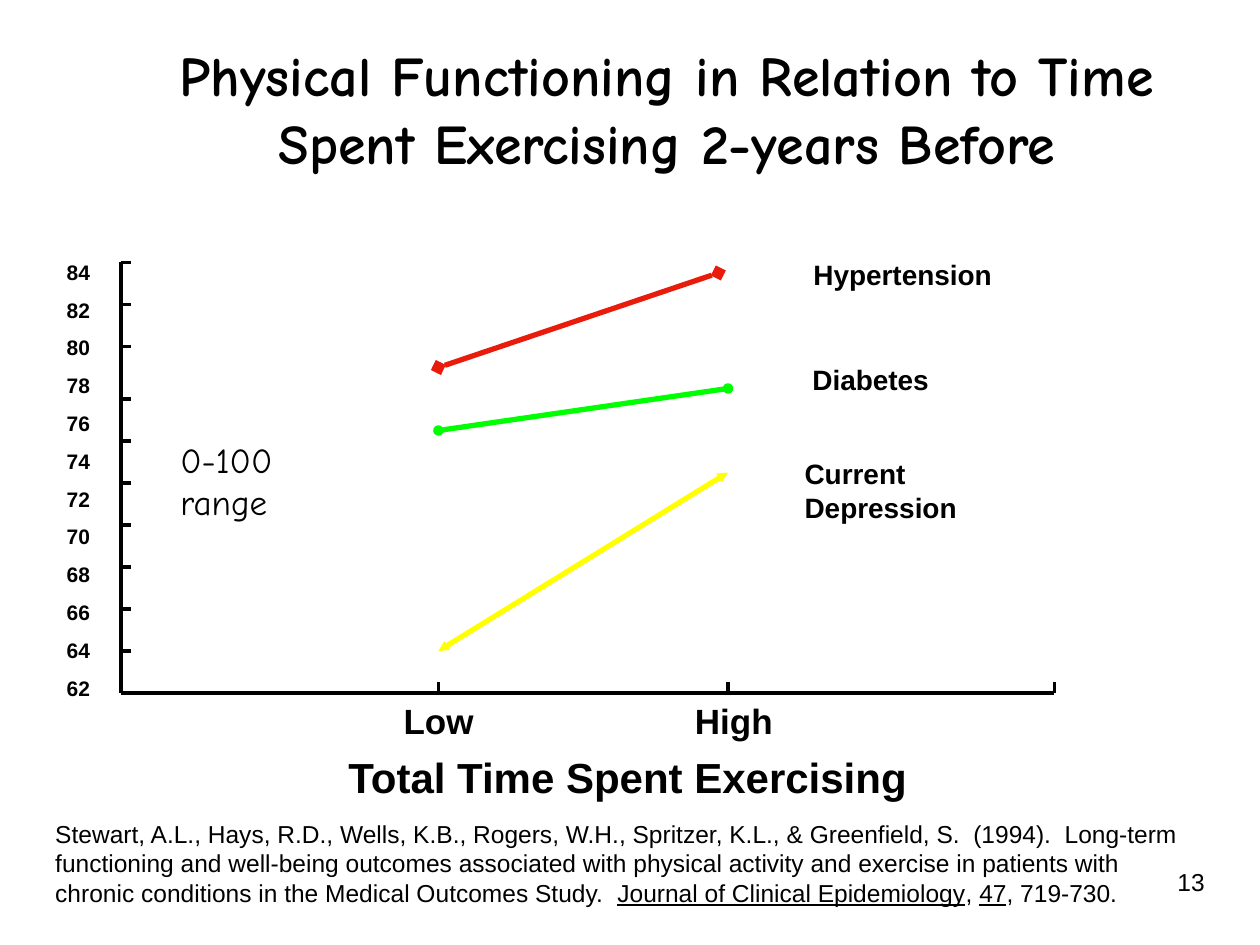
from lxml.etree import SubElement
from pptx import Presentation
from pptx.dml.color import RGBColor
from pptx.enum.shapes import MSO_CONNECTOR
from pptx.enum.text import MSO_ANCHOR, MSO_AUTO_SIZE, PP_ALIGN
from pptx.oxml.ns import qn
from pptx.util import Pt

BLACK = RGBColor(0x00, 0x00, 0x00)
RED = RGBColor(0xE9, 0x1B, 0x0B)
GREEN = RGBColor(0x00, 0xFF, 0x00)
YELLOW = RGBColor(0xFF, 0xFF, 0x00)

# Content: a text is a list of paragraphs, lines are parted by "\n",
# and "_" switches underlining on and off
TITLE = "Physical Functioning in Relation to Time\nSpent Exercising 2-years Before"
CITATION = (
    "Stewart, A.L., Hays, R.D., Wells, K.B., Rogers, W.H., Spritzer, K.L., & Greenfield, S.  (1994).  Long-term\n"
    "functioning and well-being outcomes associated with physical activity and exercise in patients with\n"
    "chronic conditions in the Medical Outcomes Study.  _Journal of Clinical Epidemiology_, _47_, 719-730."
)
SCALE = [str(value) for value in range(84, 61, -2)]

# Font formats
HEADING = {"name": "Comic Neue", "size": Pt(32), "bold": True}
RANGE = {"name": "Comic Neue", "size": Pt(20), "bold": False}
PLAIN = {"name": "Arial", "size": Pt(14), "bold": False}
SERIES_NAME = {"name": "Arial", "size": Pt(16), "bold": True}
CATEGORY = {"name": "Arial", "size": Pt(20), "bold": True}
AXIS_TITLE = {"name": "Arial", "size": Pt(24), "bold": True}
SCALE_LABEL = {"name": "Arial", "size": Pt(12), "bold": True}

# Frame formats
FIXED = {"word_wrap": True}
ONE_LINE = {"word_wrap": False, "auto_size": MSO_AUTO_SIZE.SHAPE_TO_FIT_TEXT}
WRAPPED = {"word_wrap": True, "auto_size": MSO_AUTO_SIZE.SHAPE_TO_FIT_TEXT}
SLIM = {"margin_left": Pt(6.3), "margin_right": Pt(6.3),
        "margin_top": Pt(3.1), "margin_bottom": Pt(3.1)}

# Paragraphs, box (left, top, width, height), font, frame, paragraph format
LABELS = [
    (["13"], (580.5, 492, 115, 37.5), PLAIN, FIXED, {"alignment": PP_ALIGN.RIGHT}),
    (["Hypertension"], (458.5, 144, 115, 26), SERIES_NAME, ONE_LINE | SLIM, {}),
    (["Diabetes"], (458, 204, 80, 26), SERIES_NAME, ONE_LINE | SLIM, {}),
    (["Current Depression"], (453.5, 258, 143, 45.5), SERIES_NAME, WRAPPED | SLIM, {}),
    ([CITATION], (24.5, 464.5, 659.5, 58.5), PLAIN, ONE_LINE, {}),
    (["Low"], (223.5, 396, 54.5, 31.5), CATEGORY, ONE_LINE, {}),
    (["High"], (390, 396, 60, 31.5), CATEGORY, ONE_LINE, {}),
    (["Total Time Spent Exercising"], (192, 426, 337, 36.5), AXIS_TITLE, ONE_LINE, {}),
    (SCALE, (31, 137.5, 28, 291), SCALE_LABEL, ONE_LINE, {"line_spacing": 1.5}),
    (["0-100 range"], (96, 247, 84, 55.5), RANGE, WRAPPED, {}),
]

# Axes and their ticks
ORIGIN_X, ORIGIN_Y = 69, 396
AXIS_TOP, AXIS_RIGHT = 150, 602.5
LOW_X, HIGH_X = 250.5, 416
TICK = 6
TICK_GAP = 24
VALUE_TICKS = [*range(AXIS_TOP, 199, TICK_GAP), *range(228, 373, TICK_GAP)]
CATEGORY_TICKS = [LOW_X, HIGH_X, AXIS_RIGHT]

# Start, end, colour, marker
SERIES = [
    ((LOW_X, 210), (410.5, 156), RED, {"type": "diamond"}),
    ((LOW_X, 246), (HIGH_X, 222), GREEN, {"type": "oval", "w": "sm", "len": "sm"}),
    ((LOW_X, 372), (HIGH_X, 270), YELLOW, {"type": "triangle", "w": "sm", "len": "sm"}),
]


def apply_format(target, values):
    for key, value in values.items():
        setattr(target, key, value)


def write(frame, paragraphs, font_format, paragraph_format):
    for index, text in enumerate(paragraphs):
        paragraph = frame.add_paragraph() if index else frame.paragraphs[0]
        apply_format(paragraph, paragraph_format)
        for number, line in enumerate(text.split("\n")):
            if number:
                paragraph.add_line_break()
            for part, words in enumerate(line.split("_")):
                run = paragraph.add_run()
                run.text = words
                apply_format(run.font, font_format)
                run.font.color.rgb = BLACK
                if part % 2:
                    run.font.underline = True


def add_line(slide, start, end, color=BLACK, width=2, marker=None):
    line = slide.shapes.add_connector(
        MSO_CONNECTOR.STRAIGHT, *(Pt(value) for value in (*start, *end)))
    line.line.color.rgb = color
    line.line.width = Pt(width)
    if marker:
        outline = line.line._get_or_add_ln()
        for tag in ("a:headEnd", "a:tailEnd"):
            SubElement(outline, qn(tag), marker)
    SubElement(line._element.spPr, qn("a:effectLst"))


def main():
    deck = Presentation()
    deck.slide_width, deck.slide_height = Pt(720), Pt(540)
    slide = deck.slides.add_slide(deck.slide_layouts[5])

    # Title, raised by a deep bottom margin
    title = slide.shapes.title
    title.left, title.top, title.width, title.height = Pt(42.5), Pt(36), Pt(677.5), Pt(90)
    apply_format(title.text_frame, {
        "auto_size": MSO_AUTO_SIZE.NONE,
        "vertical_anchor": MSO_ANCHOR.MIDDLE,
        "margin_bottom": Pt(42),
    })
    write(title.text_frame, [TITLE], HEADING, {"alignment": PP_ALIGN.CENTER})

    # Axes
    add_line(slide, (ORIGIN_X, AXIS_TOP), (ORIGIN_X, ORIGIN_Y))
    add_line(slide, (ORIGIN_X, ORIGIN_Y), (AXIS_RIGHT, ORIGIN_Y))
    for y in VALUE_TICKS:
        add_line(slide, (ORIGIN_X, y), (ORIGIN_X + TICK, y))
    for x in CATEGORY_TICKS:
        add_line(slide, (x, ORIGIN_Y), (x, ORIGIN_Y - TICK))

    # Series
    for start, end, color, marker in SERIES:
        add_line(slide, start, end, color, 3, marker)

    # Labels, citation and page number
    for paragraphs, box, font_format, frame_format, paragraph_format in LABELS:
        frame = slide.shapes.add_textbox(*(Pt(value) for value in box)).text_frame
        apply_format(frame, frame_format)
        write(frame, paragraphs, font_format, paragraph_format)

    deck.save("out.pptx")


if __name__ == "__main__":
    main()
